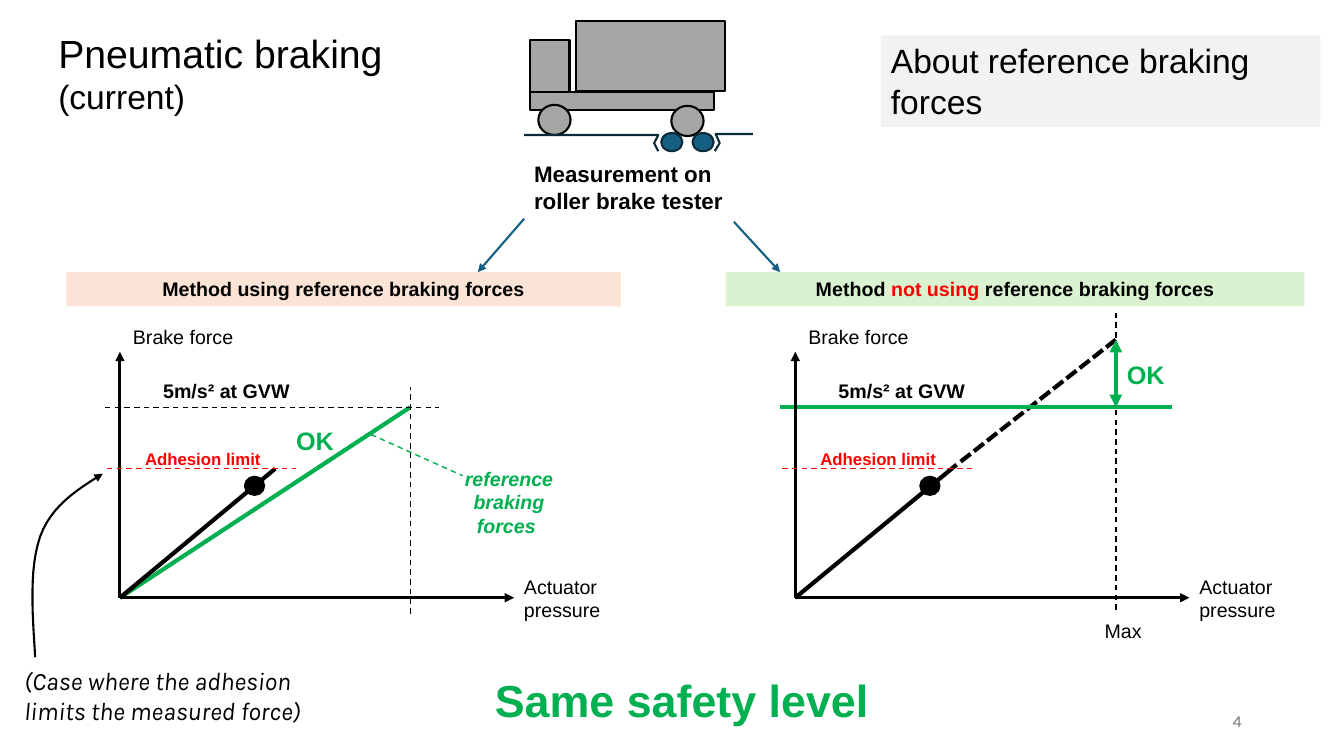
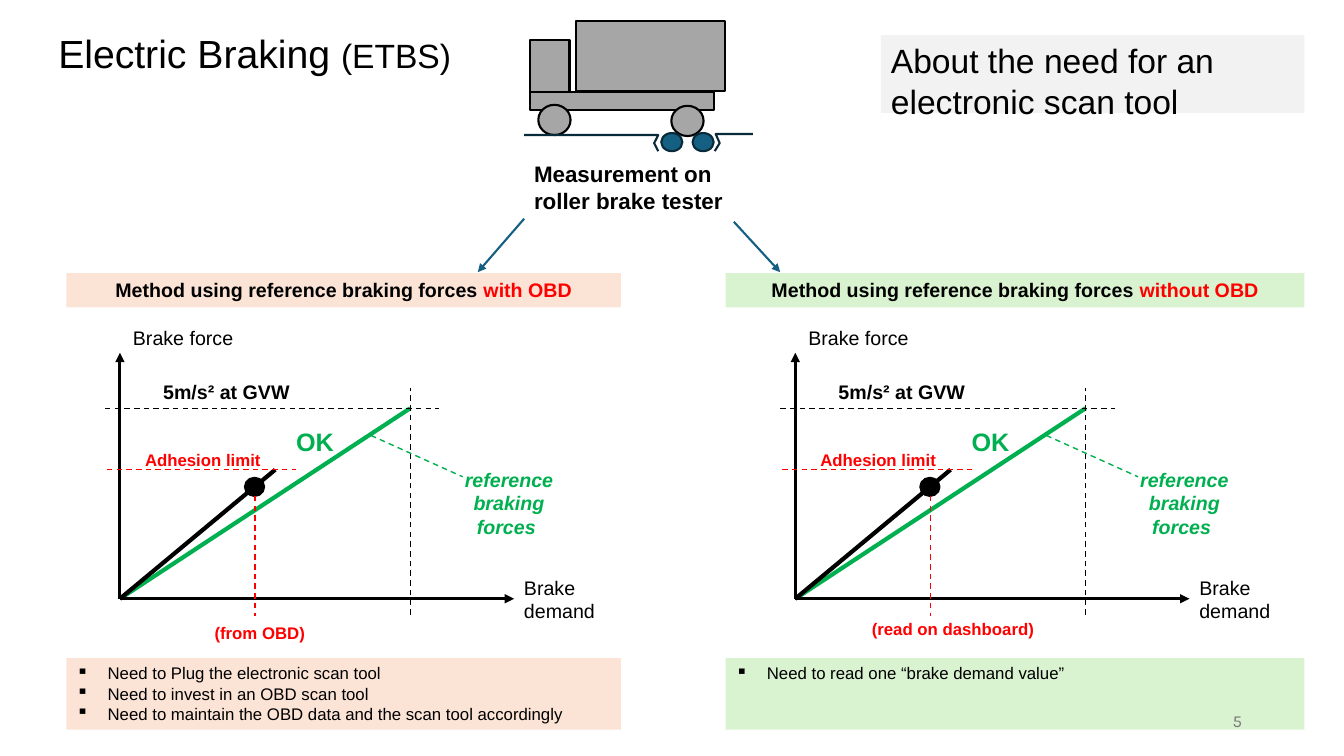
from lxml.etree import SubElement
from pptx import Presentation
from pptx.dml.color import RGBColor
from pptx.enum.dml import MSO_LINE
from pptx.enum.shapes import MSO_CONNECTOR, MSO_SHAPE
from pptx.enum.text import MSO_ANCHOR, PP_ALIGN
from pptx.oxml.ns import qn
from pptx.util import Inches, Pt

CELL = Inches(0.1)
COLUMNS, ROWS = 133.33, 75
BLACK, WHITE, RED, GREEN = "000000", "FFFFFF", "FF0000", "00B050"
GREY, PALE_GREY, NUMBER_GREY = "A6A6A6", "F2F2F2", "797979"
BLUE, NAVY, PEACH, MINT = "156082", "092A39", "FBE3D6", "D9F2D0"
OVAL = MSO_SHAPE.OVAL
CENTER = PP_ALIGN.CENTER
DASH, SHORT_DASH = MSO_LINE.DASH, MSO_LINE.SQUARE_DOT


def add_box(shapes, at, paragraphs=(), fill=None, line=None, kind=MSO_SHAPE.RECTANGLE,
            size=14, color=BLACK, bold=False, italic=False, font="Arial",
            align=PP_ALIGN.LEFT, anchor=MSO_ANCHOR.TOP, bullet=None):
    place = [round(value * CELL) for value in at]
    if fill:
        shape = shapes.add_shape(kind, *place)
        shape.shadow.inherit = False
        shape.fill.solid()
        shape.fill.fore_color.rgb = RGBColor.from_string(fill)
        if line:
            shape.line.color.rgb = RGBColor.from_string(line)
            shape.line.width = Pt(1.5)
        else:
            shape.line.fill.background()
    else:
        shape = shapes.add_textbox(*place)
    frame = shape.text_frame
    frame.word_wrap = True
    frame.vertical_anchor = anchor
    for index, runs in enumerate(paragraphs):
        paragraph = frame.add_paragraph() if index else frame.paragraphs[0]
        paragraph.alignment = align
        if bullet:
            properties = paragraph._p.get_or_add_pPr()
            properties.set("marL", str(Inches(0.31)))
            properties.set("indent", str(-Inches(0.31)))
            SubElement(properties, qn("a:buChar")).set("char", bullet)
        paragraph.font.name = font
        paragraph.font.size = Pt(size)
        paragraph.font.bold = bold
        paragraph.font.italic = italic
        paragraph.font.color.rgb = RGBColor.from_string(color)
        if isinstance(runs, str):
            paragraph.add_run().text = runs
            continue
        for text, run_color, run_size in runs:
            run = paragraph.add_run()
            run.text = text
            run.font.size = Pt(run_size)
            run.font.color.rgb = RGBColor.from_string(run_color)


def add_line(shapes, points, color=BLACK, width=1.0, dash=None, ends=()):
    places = [(round(x * CELL), round(y * CELL)) for x, y in points]
    if len(places) == 2:
        shape = shapes.add_connector(MSO_CONNECTOR.STRAIGHT, *places[0], *places[1])
    else:
        builder = shapes.build_freeform(*places[0])
        builder.add_line_segments(places[1:], close=False)
        shape = builder.convert_to_shape()
        shape.fill.background()
    shape.line.color.rgb = RGBColor.from_string(color)
    shape.line.width = Pt(width)
    if dash:
        shape.line.dash_style = dash
    properties = shape._element.spPr
    for end in ends:
        SubElement(properties.find(qn("a:ln")), qn(f"a:{end}")).set("type", "triangle")
    SubElement(properties, qn("a:effectLst"))


TRUCK = [
    ((52.6, 4, 3.9, 5.2), MSO_SHAPE.RECTANGLE, GREY, BLACK),
    ((52.6, 9.1, 18.2, 1.8), MSO_SHAPE.RECTANGLE, GREY, BLACK),
    ((57.1, 2.1, 14.8, 6.9), MSO_SHAPE.RECTANGLE, GREY, BLACK),
    ((53.4, 10.4, 3.2, 3), OVAL, GREY, BLACK),
    ((66.6, 10.5, 3.2, 3), OVAL, GREY, BLACK),
    ((65.6, 13.2, 2.1, 1.8), OVAL, BLUE, NAVY),
    ((68.7, 13.2, 2.1, 1.8), OVAL, BLUE, NAVY),
]
ROADS = [
    [(52, 13.4), (65.3, 13.4), (64.9, 14.2), (65.3, 15)],
    [(74.7, 13.3), (71, 13.3), (71.4, 14.2), (70.9, 15)],
]
BRANCHES = [[(52, 21.7), (47.4, 27)], [(72.8, 22), (77.4, 27)]]
BANDS = [(6.6, 55, PEACH), (72, 57.4, MINT)]
METHOD = "Method using reference braking forces"

SLIDES = [
    {
        "number": "4",
        "title": [[("Pneumatic braking", BLACK, 28)], [("(current)", BLACK, 24)]],
        "topic": ("About reference braking forces", 43.6, 9.1),
        "axis": "Actuator pressure",
        "drop": 0,
        "charts": [
            {"method": METHOD, "reference": True},
            {"method": [("Method ", BLACK, 14), ("not using ", RED, 14),
                        ("reference braking forces", BLACK, 14)], "reference": False},
        ],
    },
    {
        "number": "5",
        "title": [[("Electric Braking ", BLACK, 28), ("(ETBS)", BLACK, 24)]],
        "topic": ("About the need for an electronic scan tool", 42, 7.7),
        "axis": "Brake demand",
        "drop": 0.1,
        "charts": [
            {"method": [(METHOD + " ", BLACK, 14), ("with OBD", RED, 14)],
             "reference": True,
             "demand": ("(from OBD)", 8.4, 1.9),
             "needs": ["Need to Plug the electronic scan tool",
                       "Need to invest in an OBD scan tool",
                       "Need to maintain the OBD data and the scan tool accordingly"]},
            {"method": [(METHOD + " ", BLACK, 14), ("without OBD", RED, 14)],
             "reference": True,
             "demand": ("(read on dashboard)", 6.6, 1.5),
             "needs": ["Need to read one “brake demand value”"]},
        ],
    },
]

presentation = Presentation()
presentation.slide_width = round(COLUMNS * CELL)
presentation.slide_height = ROWS * CELL

for content in SLIDES:
    slide = presentation.slides.add_slide(presentation.slide_layouts[6])
    shapes = slide.shapes

    for index, chart in enumerate(content["charts"]):
        left = 11.9 + 67 * index
        base = 59.3 + content["drop"]
        limit, level = base - 12.8, base - 18.9
        band_left, band_width, band_fill = BANDS[index]

        if chart["reference"]:
            corner = left + 28.8
            add_line(shapes, [(left, base), (corner, level)], GREEN, 3)
            add_line(shapes, [(left, base), (left + 15.4, limit)], width=3)
            add_line(shapes, [(left - 1.5, level), (left + 31.7, level)], dash=DASH)
            add_line(shapes, [(corner, base + 1.6), (corner, base - 20.9)], dash=DASH)
            add_line(shapes, [(left + 24.9, base - 16.2), (left + 34, base - 12.1)],
                     GREEN, dash=DASH)
            add_box(shapes, (left + 31.6, base - 13.5, 14, 8.1), ["reference braking forces "],
                    color=GREEN, bold=True, italic=True, align=CENTER)
            ok_at = (left + 16.5, base - 17.6, 8, 4)
        else:
            maximum, peak = left + 31.8, base - 25.6
            add_line(shapes, [(left, base), (left + 16, base - 13.2)], width=3)
            add_line(shapes, [(left + 16.4, base - 13.5), (maximum, peak)],
                     width=3, dash=SHORT_DASH)
            add_line(shapes, [(maximum, base + 1.2), (maximum, base - 28.5)], dash=DASH)
            add_line(shapes, [(left - 1.5, level), (left + 37.4, level)], GREEN, 3)
            add_line(shapes, [(maximum, level), (maximum, peak)], GREEN, 3,
                     ends=("headEnd", "tailEnd"))
            add_box(shapes, (left + 29.7, base + 1.6, 9.6, 3.4), ["Max"])
            ok_at = (left + 31.9, base - 24.1, 8, 4)
        add_box(shapes, ok_at, ["OK"], size=18, color=GREEN, bold=True)

        for tip in [(left + 39.1, base), (left, base - 24.4)]:
            add_line(shapes, [(left, base), tip], width=2.25, ends=("tailEnd",))
        add_line(shapes, [(left - 1.3, limit), (left + 17.5, limit)], RED, dash=DASH)
        add_box(shapes, (left + 12.4, base - 12, 1.9, 1.8), fill=BLACK, line=BLACK, kind=OVAL)
        add_box(shapes, (left + 0.3, base - 27.6, 14.8, 3.4), ["Brake force"])
        add_box(shapes, (left + 39.1, base - 2.8, 11.3, 5.7), [content["axis"]])
        add_box(shapes, (left + 1.5, base - 15.3, 15.1, 3), ["Adhesion limit"],
                size=12, color=RED, bold=True)
        add_box(shapes, (left + 3.3, base - 22.2, 18, 3.4), ["5m/s² at GVW"], bold=True)
        add_box(shapes, (band_left, 27 + content["drop"], band_width, 3.4), [chart["method"]],
                fill=band_fill, bold=True, align=CENTER)

        if "demand" in chart:
            label, label_left, label_top = chart["demand"]
            add_line(shapes, [(left + 13.4, base - 10.2), (left + 13.4, base + 1.7)],
                     RED, dash=DASH)
            add_box(shapes, (left + label_left, base + label_top, 20.5, 3), [label],
                    size=12, color=RED, bold=True)
            add_box(shapes, (band_left, 65.3, band_width, 7.1), chart["needs"],
                    fill=band_fill, size=12, bullet="▪")
        elif chart["reference"]:
            add_box(shapes, (1.4, 65.5, 34.9, 7.1),
                    ["(Case where the adhesion limits the measured force)"],
                    size=18, italic=True, font="Karla")
            curve = []
            for a, b, c, d in [[(3.5, 65.2), (3.2, 60.7), (2.9, 56.3), (4, 53.2)],
                               [(4, 53.2), (5.1, 50.2), (7.6, 48.6), (10.2, 47)]]:
                for step in range(13):
                    t = step / 12
                    curve.append(tuple(
                        (1 - t) ** 3 * p + 3 * (1 - t) ** 2 * t * q
                        + 3 * (1 - t) * t ** 2 * r + t ** 3 * s
                        for p, q, r, s in zip(a, b, c, d)))
            add_line(shapes, curve, width=1.5, ends=("tailEnd",))
        else:
            add_box(shapes, (43.3, 66.2, 48.7, 6.4), ["Same safety level"], fill=WHITE,
                    size=32, color=GREEN, bold=True, align=CENTER)

    truck = shapes.add_group_shape()
    for at, kind, fill, line in TRUCK:
        add_box(truck.shapes, at, fill=fill, line=line, kind=kind)
    for road in ROADS:
        add_line(truck.shapes, road, NAVY, 1.5)
    add_box(shapes, (52, 15.4, 23.6, 6.4), ["Measurement on roller brake tester"],
            size=16, bold=True)
    for branch in BRANCHES:
        add_line(shapes, branch, BLUE, 1.5, ends=("tailEnd",))

    topic, topic_width, topic_height = content["topic"]
    add_box(shapes, (4.8, 2.4, 45, 9.8), content["title"])
    add_box(shapes, (87.4, 3.5, topic_width, topic_height), [topic], fill=PALE_GREY, size=24)
    add_box(shapes, (94.2, 69.5, 30, 4), [content["number"]], size=12, color=NUMBER_GREY,
            font="Karla", align=PP_ALIGN.RIGHT, anchor=MSO_ANCHOR.MIDDLE)

presentation.save("out.pptx")
